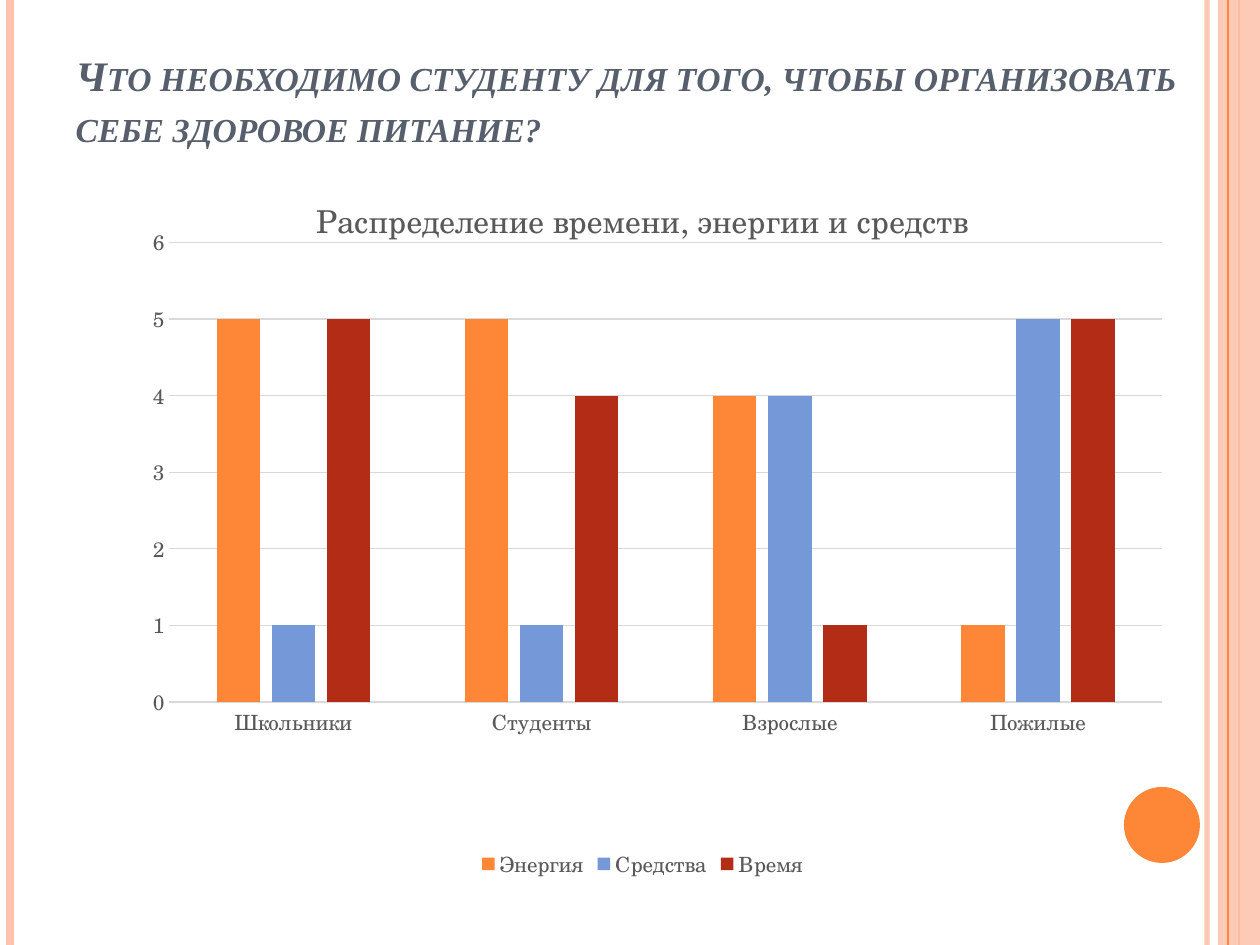
from dataclasses import dataclass

from lxml import etree
from pptx import Presentation
from pptx.chart.data import CategoryChartData
from pptx.dml.color import RGBColor
from pptx.enum.chart import XL_CHART_TYPE, XL_LEGEND_POSITION, XL_TICK_MARK
from pptx.enum.shapes import MSO_CONNECTOR, MSO_SHAPE
from pptx.enum.text import MSO_ANCHOR, MSO_AUTO_SIZE, PP_ALIGN
from pptx.oxml.ns import qn
from pptx.util import Emu, Pt

COLUMNS = XL_CHART_TYPE.COLUMN_CLUSTERED
LEGEND_BOTTOM = XL_LEGEND_POSITION.BOTTOM
NO_TICK = XL_TICK_MARK.NONE
STRAIGHT = MSO_CONNECTOR.STRAIGHT
RECTANGLE, OVAL = MSO_SHAPE.RECTANGLE, MSO_SHAPE.OVAL
BOTTOM, LEFT = MSO_ANCHOR.BOTTOM, PP_ALIGN.LEFT
NO_AUTOFIT = MSO_AUTO_SIZE.NONE

EMU_PER_PX = 914400 / 126
PAGE_WIDTH, PAGE_HEIGHT = 1260, 945


@dataclass(frozen=True)
class Theme:
    orange: str = "FE8637"
    peach: str = "FEC3AE"
    blue: str = "7598D9"
    red: str = "B32C16"
    heading: str = "575F6D"
    chart_text: str = "595959"
    grid: str = "D9D9D9"
    heading_font: str = "Times New Roman"
    chart_font: str = "TeX Gyre Schola"
    heading_size: int = 24
    chart_title_size: int = 18
    label_size: int = 12


THEME = Theme()

HEADING = "Что необходимо студенту для того, чтобы организовать себе здоровое питание?"
CHART_TITLE = "Распределение времени, энергии и средств"
CATEGORIES = ["Школьники", "Студенты", "Взрослые", "Пожилые"]
SERIES = [
    ("Энергия", (5, 5, 4, 1), THEME.orange),
    ("Средства", (1, 1, 4, 5), THEME.blue),
    ("Время", (5, 4, 1, 5), THEME.red),
]


def px(*lengths):
    return [Emu(round(length * EMU_PER_PX)) for length in lengths]


def set_alpha(element, percent):
    color = next(element.iter(qn("a:srgbClr")))
    etree.SubElement(color, qn("a:alpha")).set("val", str(percent * 1000))


def style_font(font, name, size, color):
    font.name = name
    font.size = Pt(size)
    font.color.rgb = RGBColor.from_string(color)


def style_line(line, color, width):
    line.color.rgb = RGBColor.from_string(color)
    line.width = Pt(width)


def add_stripe(slide, x, color, width, alpha=100):
    """Draw a vertical line over the full height of the page."""
    stripe = slide.shapes.add_connector(STRAIGHT, *px(x, 0, x, PAGE_HEIGHT))
    style_line(stripe.line, color, width)
    properties = stripe._element.spPr
    etree.SubElement(properties, qn("a:effectLst"))
    if alpha < 100:
        set_alpha(properties, alpha)


def add_plain_shape(slide, kind, bounds, color, alpha=100):
    shape = slide.shapes.add_shape(kind, *px(*bounds))
    shape.shadow.inherit = False
    shape.fill.solid()
    shape.fill.fore_color.rgb = RGBColor.from_string(color)
    shape.line.fill.background()
    if alpha < 100:
        set_alpha(shape._element.spPr, alpha)


def add_decoration(slide):
    add_stripe(slide, 1207, THEME.peach, 3, alpha=93)
    add_stripe(slide, 10, THEME.peach, 4.5)
    add_stripe(slide, 1239, THEME.orange, 1.5)
    add_plain_shape(slide, RECTANGLE, (1218, 0, 42, PAGE_HEIGHT), THEME.peach, alpha=87)
    add_stripe(slide, 1228, THEME.orange, 0.75)
    add_plain_shape(slide, OVAL, (1124, 787, 76, 76), THEME.orange)


def set_heading(slide):
    title = slide.shapes.title
    title.left, title.top, title.width, title.height = px(63, 29, 1134, 128)
    frame = title.text_frame
    frame.text = HEADING
    frame.word_wrap = True
    frame.auto_size = NO_AUTOFIT
    frame.vertical_anchor = BOTTOM
    para = frame.paragraphs[0]
    para.alignment = LEFT
    span = para.runs[0]
    style_font(span.font, THEME.heading_font, THEME.heading_size, THEME.heading)
    span.font.bold = span.font.italic = True
    span.font._element.set("cap", "small")


def set_plot_area(chart, x, y, width, height):
    """Fix the inner plot area, given as fractions of the chart."""
    plot_area = chart._chartSpace.chart.plotArea
    layout = plot_area.find(qn("c:layout"))
    if layout is None:
        layout = etree.Element(qn("c:layout"))
        plot_area.insert(0, layout)
    manual = etree.SubElement(layout, qn("c:manualLayout"))
    settings = [("layoutTarget", "inner"), ("xMode", "edge"), ("yMode", "edge"),
                ("x", x), ("y", y), ("w", width), ("h", height)]
    for tag, value in settings:
        etree.SubElement(manual, qn(f"c:{tag}")).set("val", str(value))


def style_axes(chart):
    for axis in (chart.category_axis, chart.value_axis):
        axis.major_tick_mark = axis.minor_tick_mark = NO_TICK
        style_font(axis.tick_labels.font, THEME.chart_font, THEME.label_size, THEME.chart_text)
    style_line(chart.category_axis.format.line, THEME.grid, 0.75)
    values = chart.value_axis
    values.minimum_scale, values.maximum_scale, values.major_unit = 0, 6, 1
    values.format.line.fill.background()
    values.has_major_gridlines = True
    style_line(values.major_gridlines.format.line, THEME.grid, 0.75)


def add_column_chart(slide):
    data = CategoryChartData()
    data.categories = CATEGORIES
    for name, values, _ in SERIES:
        data.add_series(name, values)
    chart = slide.shapes.add_chart(COLUMNS, *px(86, 168, 1113, 716), data).chart
    style_font(chart.font, THEME.chart_font, THEME.label_size, THEME.chart_text)

    chart.has_title = True
    chart.chart_title.include_in_layout = False
    frame = chart.chart_title.text_frame
    frame.text = CHART_TITLE
    span = frame.paragraphs[0].runs[0]
    style_font(span.font, THEME.chart_font, THEME.chart_title_size, THEME.chart_text)
    span.font.bold = False

    chart.has_legend = True
    chart.legend.position = LEGEND_BOTTOM
    chart.legend.include_in_layout = False
    style_font(chart.legend.font, THEME.chart_font, THEME.label_size, THEME.chart_text)

    plot = chart.plots[0]
    plot.vary_by_categories = False
    plot.gap_width, plot.overlap = 219, -27
    for series, (_, _, color) in zip(plot.series, SERIES):
        series.format.fill.solid()
        series.format.fill.fore_color.rgb = RGBColor.from_string(color)
    style_axes(chart)
    set_plot_area(chart, 0.075, 0.104, 0.892, 0.642)


def main():
    deck = Presentation()
    deck.slide_width, deck.slide_height = px(PAGE_WIDTH, PAGE_HEIGHT)
    slide = deck.slides.add_slide(deck.slide_layouts.get_by_name("Title Only"))
    add_decoration(slide)
    set_heading(slide)
    add_column_chart(slide)
    deck.save("out.pptx")


if __name__ == "__main__":
    main()
